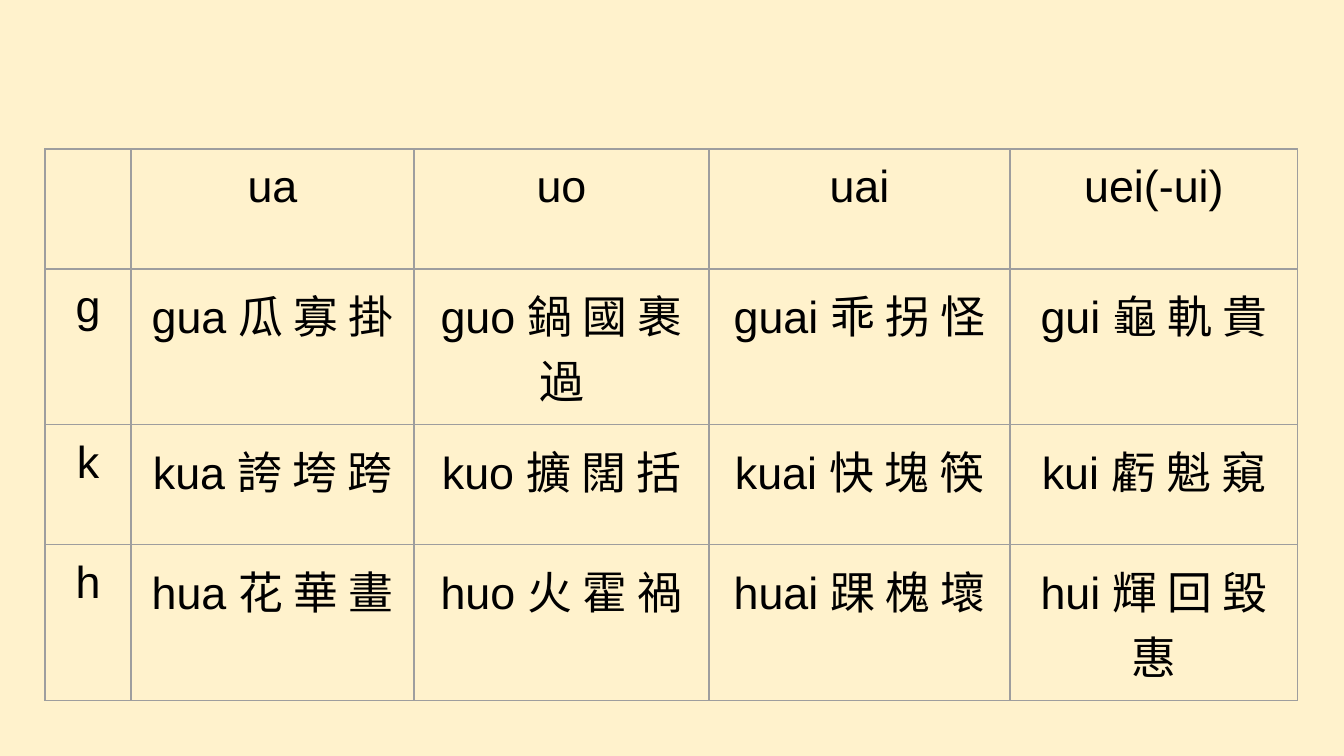
from lxml import etree
from pptx import Presentation
from pptx.dml.color import RGBColor
from pptx.enum.text import PP_ALIGN
from pptx.oxml.ns import qn
from pptx.util import Pt

CENTER = PP_ALIGN.CENTER
CREAM = RGBColor(0xFF, 0xF2, 0xCC)
BLACK = RGBColor(0x00, 0x00, 0x00)
GRAY = RGBColor(0x9E, 0x9E, 0x9E)

EMU_PER_PX = 914400 / 134.4
BLANK_LAYOUT = 6
CELL_MARGIN = 13
ROW_HEIGHT = 120
COLUMN_WIDTHS = [86, 283, 295, 301, 288]
SYLLABLES = [
    ["", "ua", "uo", "uai", "uei(-ui)"],
    ["g", "gua 瓜 寡 掛", "guo 鍋 國 裹 過", "guai 乖 拐 怪", "gui 龜 軌 貴"],
    ["k", "kua 誇 垮 跨", "kuo 擴 闊 括", "kuai 快 塊 筷", "kui 虧 魁 窺"],
    ["h", "hua 花 華 畫", "huo 火 霍 禍", "huai 踝 槐 壞", "hui 輝 回 毀 惠"],
]


def px(length):
    return round(length * EMU_PER_PX)


def add_borders(cell):
    properties = cell._tc.get_or_add_tcPr()
    for side in ("a:lnL", "a:lnR", "a:lnT", "a:lnB"):
        line = etree.SubElement(properties, qn(side), w=str(Pt(0.75)))
        fill = etree.SubElement(line, qn("a:solidFill"))
        etree.SubElement(fill, qn("a:srgbClr"), val=str(GRAY))


def format_cell(cell, text):
    margin = px(CELL_MARGIN)
    cell.margin_left = cell.margin_right = margin
    cell.margin_top = cell.margin_bottom = margin
    add_borders(cell)
    cell.fill.background()
    cell.text_frame.text = text
    paragraph = cell.text_frame.paragraphs[0]
    paragraph.alignment = CENTER
    for run in paragraph.runs:
        run.font.name = "Arial"
        run.font.size = Pt(24)
        run.font.color.rgb = BLACK


def add_syllable_table(slide, left, top):
    frame = slide.shapes.add_table(
        len(SYLLABLES), len(COLUMN_WIDTHS), px(left), px(top),
        px(sum(COLUMN_WIDTHS)), px(ROW_HEIGHT * len(SYLLABLES)))
    table = frame.table
    table.first_row = False
    table.horz_banding = False
    for column, width in zip(table.columns, COLUMN_WIDTHS):
        column.width = px(width)
    for row, texts in zip(table.rows, SYLLABLES):
        row.height = px(ROW_HEIGHT)
        for cell, text in zip(row.cells, texts):
            format_cell(cell, text)


def main():
    presentation = Presentation()
    presentation.slide_width = px(1344)
    presentation.slide_height = px(756)
    slide = presentation.slides.add_slide(presentation.slide_layouts[BLANK_LAYOUT])
    slide.background.fill.solid()
    slide.background.fill.fore_color.rgb = CREAM
    add_syllable_table(slide, 45, 149)
    presentation.save("out.pptx")


if __name__ == "__main__":
    main()
